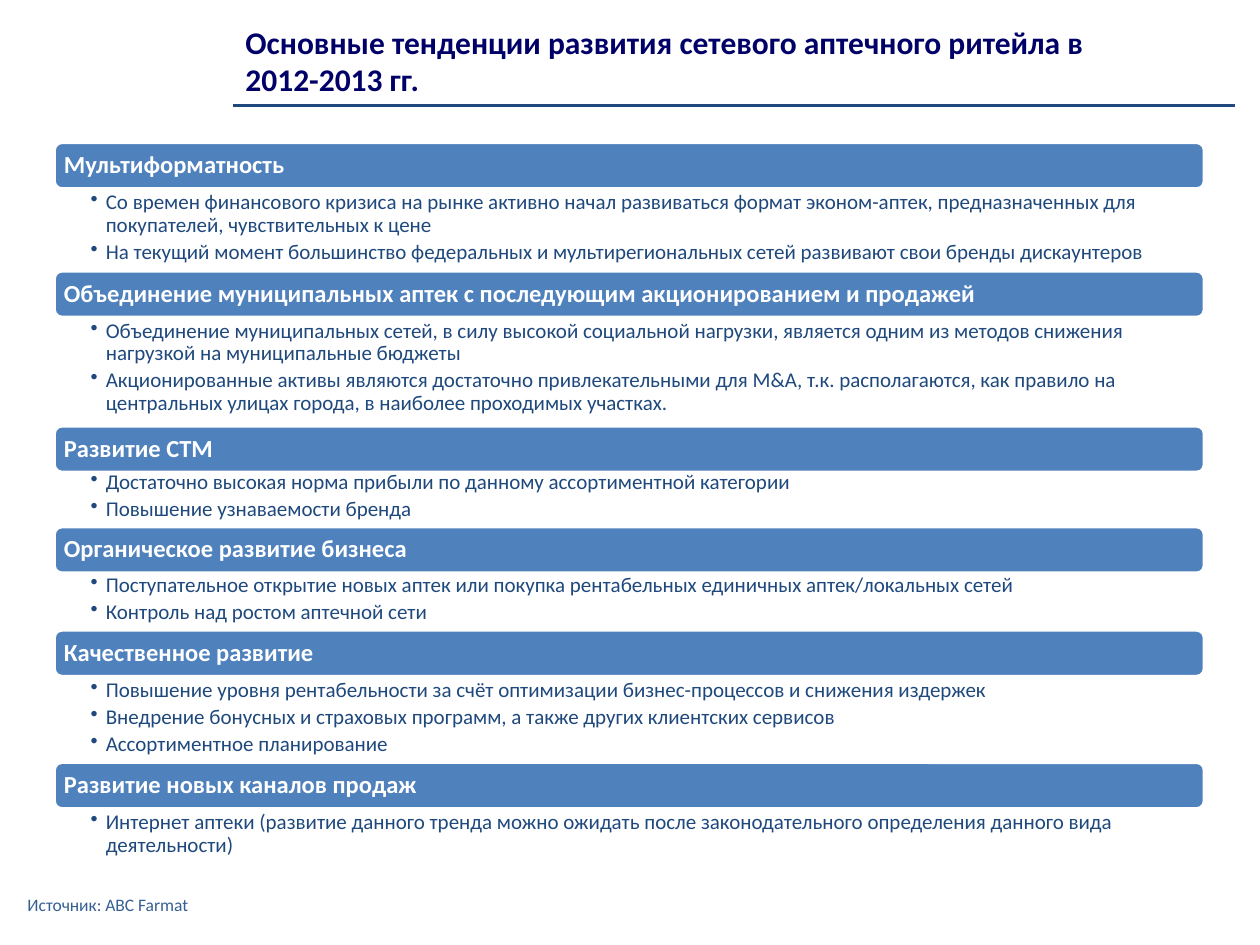
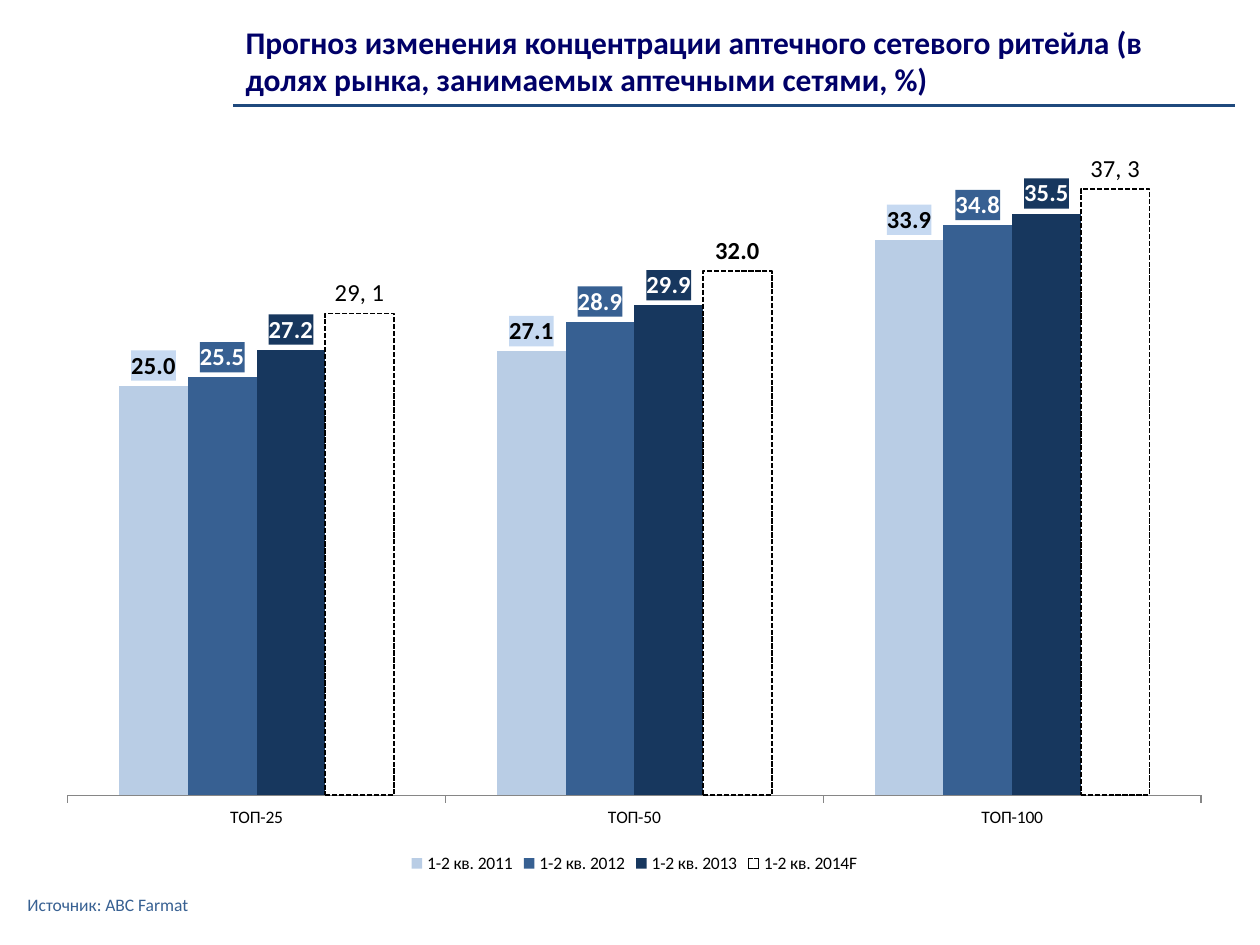
from lxml.etree import SubElement
from pptx import Presentation
from pptx.chart.data import CategoryChartData
from pptx.dml.color import RGBColor
from pptx.enum.chart import XL_CHART_TYPE as ChartType, XL_LABEL_POSITION as LabelPosition
from pptx.enum.chart import XL_LEGEND_POSITION as LegendPosition, XL_TICK_MARK as TickMark
from pptx.enum.dml import MSO_LINE as Dash
from pptx.enum.shapes import MSO_CONNECTOR as Connector, MSO_SHAPE as Shape
from pptx.enum.text import MSO_ANCHOR as Anchor, PP_ALIGN as Align
from pptx.oxml import parse_xml
from pptx.oxml.ns import nsdecls, qn
from pptx.util import Pt

PX = 9144  # one px is a hundredth of an inch
FONT = "Calibri"
WHITE = RGBColor(0xFF, 0xFF, 0xFF)
BLACK = RGBColor(0x00, 0x00, 0x00)
GREY = RGBColor(0x86, 0x86, 0x86)
TITLE_BLUE = RGBColor(0x00, 0x00, 0x68)
TEXT_BLUE = RGBColor(0x1F, 0x49, 0x7D)
BAND_BLUE = RGBColor(0x4F, 0x81, 0xBD)
MID_BLUE = RGBColor(0x37, 0x60, 0x92)
DARK_BLUE = RGBColor(0x17, 0x37, 0x5E)
PALE_BLUE = RGBColor(0xB9, 0xCD, 0xE5)
LABEL_BLUE = RGBColor(0xC6, 0xD9, 0xF1)


def px(*lengths):
    return [length * PX for length in lengths]


def write(box, lines, size, color, bold=False, anchor=Anchor.TOP, insets=(10, 5, 10, 5),
          spacing=None, after=None, bullet_indent=None):
    frame = box.text_frame
    frame.word_wrap = True
    frame.vertical_anchor = anchor
    (frame.margin_left, frame.margin_top,
     frame.margin_right, frame.margin_bottom) = px(*insets)
    for index, line in enumerate(lines):
        para = frame.paragraphs[0] if index == 0 else frame.add_paragraph()
        para.alignment = Align.LEFT
        if spacing:
            para.line_spacing = spacing
        if after:
            para.space_after = Pt(after)
        if bullet_indent:
            props = para._p.get_or_add_pPr()
            props.set("marL", str(bullet_indent * PX))
            props.set("indent", str(-bullet_indent * PX))
            SubElement(props, qn("a:buChar"), char="•")
        span = para.add_run()
        span.text = line
        span.font.name = FONT
        span.font.size = Pt(size)
        span.font.bold = bold
        span.font.color.rgb = color


deck = Presentation()
deck.slide_width, deck.slide_height = px(1000, 750)

# Shared frame: title, rule below it, source line
titles = [
    ("Основные тенденции развития сетевого аптечного ритейла в 2012-2013 гг.", 717),
    ("Прогноз изменения концентрации аптечного сетевого ритейла "
     "(в долях рынка, занимаемых аптечными сетями, %)", 795),
]
pages = []
for title, title_width in titles:
    page = deck.slides.add_slide(deck.slide_layouts[6])
    rule = page.shapes.add_connector(Connector.STRAIGHT, *px(185, 84, 980, 84))
    rule.line.color.rgb = TEXT_BLUE
    rule.line.width = Pt(1.5)
    SubElement(rule._element.spPr, qn("a:effectLst"))
    title_box = page.shapes.add_textbox(*px(185, 13, title_width, 71))
    write(title_box, [title], size=18, color=TITLE_BLUE, bold=True)
    source_box = page.shapes.add_textbox(*px(12, 698, 317, 40))
    write(source_box, ["Источник: ABC Farmat"], size=10, color=MID_BLUE, anchor=Anchor.MIDDLE)
    pages.append(page)
trends_page, forecast_page = pages

# Trends: band top, body top, body height, heading, bullets
trends = [
    (113, 150, 65, "Мультиформатность", [
        "Со времен финансового кризиса на рынке активно начал развиваться формат "
        "эконом-аптек, предназначенных для покупателей, чувствительных к цене",
        "На текущий момент большинство федеральных и мультирегиональных сетей "
        "развивают свои бренды дискаунтеров"]),
    (215, 252, 83, "Объединение муниципальных аптек с последующим акционированием и продажей", [
        "Объединение муниципальных сетей, в силу высокой социальной нагрузки, является "
        "одним из методов снижения нагрузкой на муниципальные бюджеты",
        "Акционированные активы являются достаточно привлекательными для M&A, т.к. "
        "располагаются, как правило на центральных улицах города, в наиболее проходимых "
        "участках."]),
    (338, 372, 45, "Развитие СТМ", [
        "Достаточно высокая норма прибыли по данному ассортиментной категории",
        "Повышение узнаваемости бренда"]),
    (418, 454, 45, "Органическое развитие бизнеса", [
        "Поступательное открытие новых аптек или покупка рентабельных единичных "
        "аптек/локальных сетей",
        "Контроль над ростом аптечной сети"]),
    (500, 537, 69, "Качественное развитие", [
        "Повышение уровня рентабельности за счёт оптимизации бизнес-процессов и "
        "снижения издержек",
        "Внедрение бонусных и страховых программ, а также других клиентских сервисов",
        "Ассортиментное планирование"]),
    (605, 642, 42, "Развитие новых каналов продаж", [
        "Интернет аптеки (развитие данного тренда можно ожидать после законодательного "
        "определения данного вида деятельности)"]),
]
for band_top, body_top, body_height, heading, bullets in trends:
    band = trends_page.shapes.add_shape(Shape.ROUNDED_RECTANGLE, *px(43, band_top, 913, 37))
    band.shadow.inherit = False
    band.fill.solid()
    band.fill.fore_color.rgb = BAND_BLUE
    band.line.color.rgb = WHITE
    band.line.width = Pt(2)
    write(band, [heading], size=14, color=WHITE, bold=True, anchor=Anchor.MIDDLE,
          insets=(6, 6, 6, 6), spacing=0.9)
    body = trends_page.shapes.add_textbox(*px(43, body_top, 913, body_height))
    write(body, bullets, size=12, color=TEXT_BLUE, insets=(29, 2, 12, 2),
          spacing=0.9, after=2.5, bullet_indent=12)

# Forecast chart: name, values, bar colour, label colour, label background
periods = [
    ("1-2 кв. 2011", (25.0, 27.1, 33.9), PALE_BLUE, BLACK, LABEL_BLUE),
    ("1-2 кв. 2012", (25.5, 28.9, 34.8), MID_BLUE, WHITE, MID_BLUE),
    ("1-2 кв. 2013", (27.2, 29.9, 35.5), DARK_BLUE, WHITE, DARK_BLUE),
    ("1-2 кв. 2014F", (29.4, 32.0, 37.0), None, BLACK, None),
]
chart_data = CategoryChartData(number_format="0.0")
chart_data.categories = ["ТОП-25", "ТОП-50", "ТОП-100"]
for name, values, *_ in periods:
    chart_data.add_series(name, values)
chart = forecast_page.shapes.add_chart(
    ChartType.COLUMN_CLUSTERED, *px(35, 99, 937, 598), chart_data).chart
chart.has_title = False
chart.font.name = FONT
chart.font.size = Pt(10)
chart.font.color.rgb = BLACK
chart.has_legend = True
chart.legend.position = LegendPosition.BOTTOM
chart.legend.include_in_layout = False

# Axes and plot area
chart.value_axis.visible = False
chart.value_axis.has_major_gridlines = False
chart.value_axis.minimum_scale = 0
chart.value_axis.maximum_scale = 40
chart.category_axis.major_tick_mark = TickMark.OUTSIDE
chart.category_axis.format.line.color.rgb = GREY
plot = chart.plots[0]
plot.gap_width = 150
plot.overlap = 0
plot.vary_by_categories = False
plot_area = chart._chartSpace.chart.plotArea
for old_layout in plot_area.findall(qn("c:layout")):
    plot_area.remove(old_layout)
plot_area.insert(0, parse_xml(
    f'<c:layout {nsdecls("c")}><c:manualLayout><c:layoutTarget val="inner"/>'
    '<c:xMode val="edge"/><c:yMode val="edge"/><c:x val="0.02"/><c:y val="0.02"/>'
    '<c:w val="0.96"/><c:h val="0.87"/></c:manualLayout></c:layout>'))

# Series and value labels
for series, (_, _, bar_color, label_color, label_back) in zip(plot.series, periods):
    labels = series.data_labels
    labels.show_value = True
    labels.number_format = "0.0"
    labels.number_format_is_linked = False
    labels.position = LabelPosition.OUTSIDE_END
    labels.font.name = FONT
    labels.font.size = Pt(14)
    labels.font.bold = True
    labels.font.color.rgb = label_color
    if bar_color:
        series.format.fill.solid()
        series.format.fill.fore_color.rgb = bar_color
        labels._element.find(qn("c:numFmt")).addnext(parse_xml(
            f'<c:spPr {nsdecls("c", "a")}><a:solidFill><a:srgbClr val="{label_back}"/>'
            '</a:solidFill></c:spPr>'))
    else:
        series.format.fill.background()
        series.format.line.color.rgb = BLACK
        series.format.line.width = Pt(1)
        series.format.line.dash_style = Dash.SQUARE_DOT

# Forecast labels with their own wording
for index, wording in ((0, "29, 1"), (2, "37, 3")):
    label = plot.series[3].points[index].data_label
    span = label.text_frame.paragraphs[0].add_run()
    span.text = wording
    span.font.name = FONT
    span.font.size = Pt(14)
    span.font.bold = False
    span.font.color.rgb = BLACK
    label.position = LabelPosition.OUTSIDE_END

deck.save("out.pptx")
